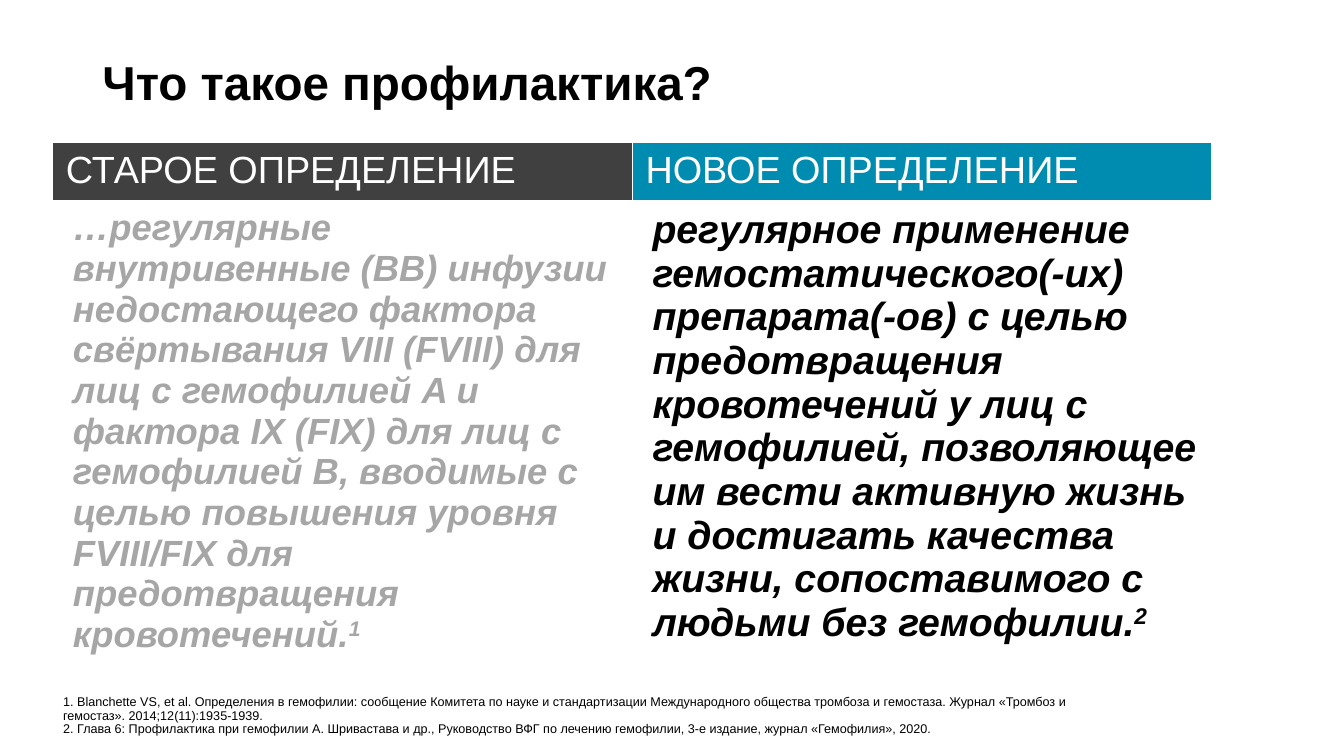
from pptx import Presentation
from pptx.dml.color import RGBColor
from pptx.enum.text import MSO_ANCHOR as Anchor, PP_ALIGN as Align
from pptx.util import Pt

BLACK = RGBColor(0x00, 0x00, 0x00)
WHITE = RGBColor(0xFF, 0xFF, 0xFF)
CHARCOAL = RGBColor(0x40, 0x40, 0x40)
TEAL = RGBColor(0x00, 0x8B, 0xB0)
GREY = RGBColor(0xA6, 0xA6, 0xA6)

DEFINITIONS = [
    ("СТАРОЕ ОПРЕДЕЛЕНИЕ", CHARCOAL,
     "…регулярные внутривенные (ВВ) инфузии недостающего фактора свёртывания "
     "VIII (FVIII) для лиц с гемофилией A и фактора IX (FIX) для лиц с "
     "гемофилией B, вводимые с целью повышения уровня FVIII/FIX для "
     "предотвращения кровотечений.", "1", 26, GREY),
    ("НОВОЕ ОПРЕДЕЛЕНИЕ", TEAL,
     "регулярное применение гемостатического(-их) препарата(-ов) с целью "
     "предотвращения кровотечений у лиц с гемофилией, позволяющее им вести "
     "активную жизнь и достигать качества жизни, сопоставимого с людьми без "
     "гемофилии.", "2", 28, BLACK),
]
REFERENCES = [
    "1. Blanchette VS, et al. Определения в гемофилии: сообщение Комитета по "
    "науке и стандартизации Международного общества тромбоза и гемостаза. "
    "Журнал «Тромбоз и гемостаз». 2014;12(11):1935-1939.",
    "2. Глава 6: Профилактика при гемофилии А. Шривастава и др., Руководство "
    "ВФГ по лечению гемофилии, 3-е издание, журнал «Гемофилия», 2020.",
]


def add_run(paragraph, text, size, color, bold=False, italic=False):
    run = paragraph.add_run()
    run.text = text
    font = run.font
    font.name, font.size, font.bold, font.italic = "Arial", Pt(size), bold, italic
    font.color.rgb = color
    return run


def format_cell(cell, fill, left):
    cell.fill.solid()
    cell.fill.fore_color.rgb = fill
    cell.margin_left, cell.margin_right = Pt(left), Pt(9.4)
    cell.margin_top = cell.margin_bottom = Pt(5)
    return cell.text_frame.paragraphs[0]


prs = Presentation()
prs.slide_width, prs.slide_height = Pt(960), Pt(540)
slide = prs.slides.add_slide(prs.slide_layouts[5])

title = slide.shapes.title
title.left, title.top, title.width, title.height = Pt(66), Pt(18), Pt(828), Pt(86)
title.text_frame.vertical_anchor = Anchor.MIDDLE
heading = title.text_frame.paragraphs[0]
heading.alignment = Align.LEFT
heading.line_spacing = 0.9
add_run(heading, "Что такое профилактика?", 34, BLACK, bold=True)

comparison = slide.shapes.add_table(
    2, 2, Pt(37.7), Pt(101.5), Pt(828), Pt(355)).table
comparison.horz_banding = False
comparison.rows[0].height, comparison.rows[1].height = Pt(42), Pt(313)
for col, (label, fill, definition, mark, size, color) in enumerate(DEFINITIONS):
    header = format_cell(comparison.cell(0, col), fill, 9.4)
    add_run(header, label, 27, WHITE)

    body = format_cell(comparison.cell(1, col), WHITE, 14.4)
    add_run(body, definition, size, color, bold=True, italic=True)
    superscript = add_run(body, mark, size, color, bold=True, italic=True)
    superscript.font._element.set("baseline", "30000")

footnotes = slide.shapes.add_textbox(Pt(38), Pt(499), Pt(738), Pt(27)).text_frame
footnotes.word_wrap = True
footnotes.vertical_anchor = Anchor.BOTTOM
footnotes.margin_bottom = 0
for i, reference in enumerate(REFERENCES):
    note = footnotes.add_paragraph() if i else footnotes.paragraphs[0]
    note.line_spacing = 0.9
    add_run(note, reference, 9, BLACK)

prs.save("out.pptx")
